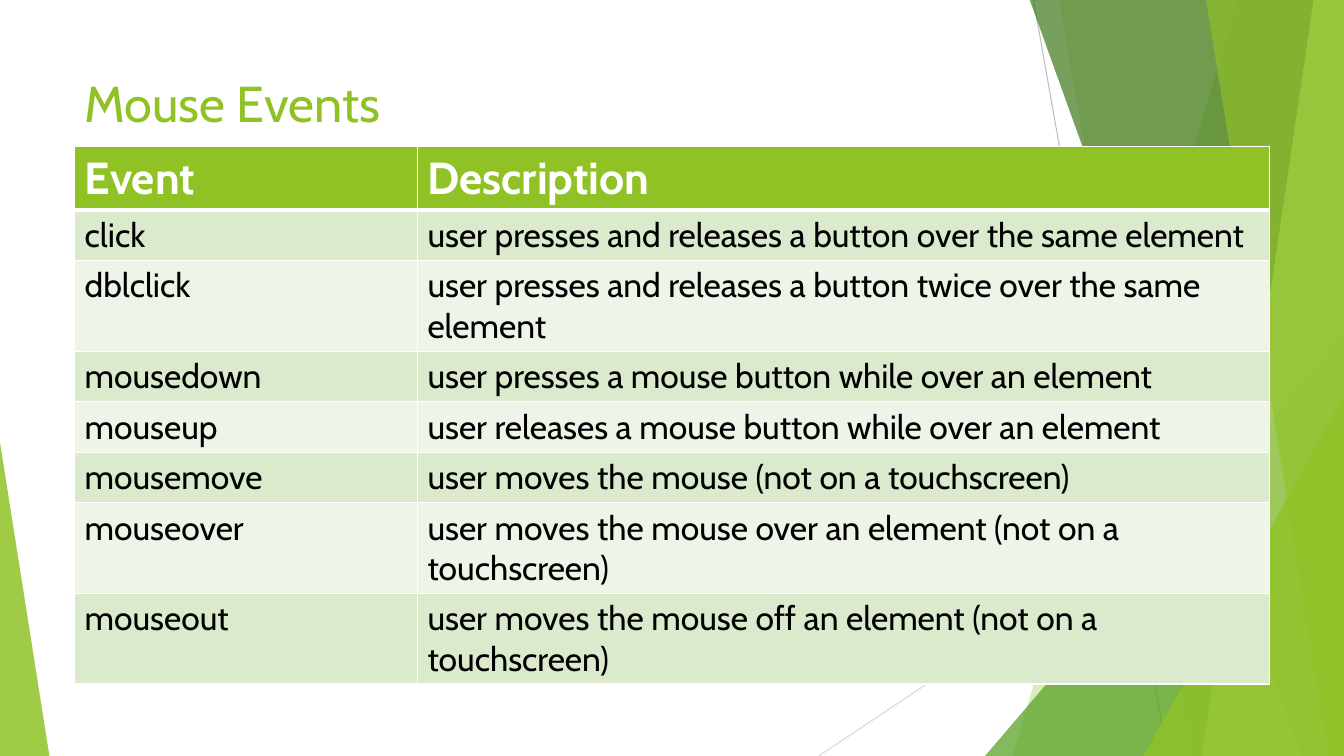
from dataclasses import dataclass

from lxml import etree
from pptx import Presentation
from pptx.dml.color import RGBColor
from pptx.enum.shapes import MSO_CONNECTOR, MSO_SHAPE
from pptx.enum.text import MSO_ANCHOR
from pptx.oxml.ns import qn
from pptx.util import Inches, Pt

STRAIGHT = MSO_CONNECTOR.STRAIGHT
TRIANGLE = MSO_SHAPE.ISOSCELES_TRIANGLE
TOP = MSO_ANCHOR.TOP
WIDTH, HEIGHT = 13.33, 7.5
FONT = "Cabin"
GREEN, WHITE, BLACK = "90C226", "FFFFFF", "000000"
TINTS = ("DBE9CD", "EEF4E8")


@dataclass
class Line:
    start: tuple[float, float]
    end: tuple[float, float]
    color: str


@dataclass
class Band:
    top: float
    foot: float
    color: str
    alpha: int


@dataclass
class Peak:
    left: float
    top: float
    width: float
    apex: float
    color: str
    alpha: int


@dataclass
class Event:
    name: str
    note: str
    height: float = 0.5


LINES = [
    Line((10.25, 0), (11.58, HEIGHT), "BFBFBF"),
    Line((WIDTH, 4.03), (8.12, HEIGHT), "D9D9D9"),
]
FACETS = [
    Band(12.28, 10.04, GREEN, 30),
    Band(10.5, 11.83, GREEN, 20),
    Peak(9.77, 3.33, 3.56, 1, "54A021", 72),
    Band(10.21, 12.91, "3F7819", 70),
    Band(13.03, 11.92, "C0E474", 70),
    Band(11.96, 13.18, GREEN, 65),
    Peak(11.34, 3.93, 1.99, 1, GREEN, 80),
    Peak(0, 4.39, 0.49, 0, GREEN, 85),
]
EVENTS = [
    Event("click", "user presses and releases a button over the same element"),
    Event("dblclick", "user presses and releases a button twice over the same element", 0.9),
    Event("mousedown", "user presses a mouse button while over an element"),
    Event("mouseup", "user releases a mouse button while over an element"),
    Event("mousemove", "user moves the mouse (not on a touchscreen)"),
    Event("mouseover", "user moves the mouse over an element (not on a touchscreen)", 0.9),
    Event("mouseout", "user moves the mouse off an element (not on a touchscreen)", 0.9),
]


def rgb(code: str) -> RGBColor:
    return RGBColor.from_string(code)


def write(frame, text: str, *, size: float, color: str, bold: bool = False) -> None:
    frame.word_wrap = True
    run = frame.paragraphs[0].add_run()
    run.text = text
    run.font.name = FONT
    run.font.size = Pt(size)
    run.font.bold = bold
    run.font.color.rgb = rgb(color)


def draw_line(slide, line: Line) -> None:
    ends = [Inches(n) for n in (*line.start, *line.end)]
    link = slide.shapes.add_connector(STRAIGHT, *ends)
    link.line.color.rgb = rgb(line.color)
    link.line.width = Pt(0.75)
    etree.SubElement(link._element.spPr, qn("a:effectLst"))


def paint(shape, color: str, alpha: int) -> None:
    shape.shadow.inherit = False
    shape.line.fill.background()
    shape.fill.solid()
    shape.fill.fore_color.rgb = rgb(color)
    tone = shape._element.spPr.find(qn("a:solidFill"))[0]
    etree.SubElement(tone, qn("a:alpha"), val=str(alpha * 1000))


def draw_band(slide, band: Band) -> None:
    rim = -0.01
    spots = [(band.top, rim), (WIDTH, rim), (WIDTH, HEIGHT), (band.foot, HEIGHT)]
    first, *rest = [(Inches(x), Inches(y)) for x, y in spots]
    pen = slide.shapes.build_freeform(*first)
    pen.add_line_segments(rest, close=True)
    paint(pen.convert_to_shape(), band.color, band.alpha)


def draw_peak(slide, peak: Peak) -> None:
    box = (peak.left, peak.top, peak.width, HEIGHT - peak.top)
    shape = slide.shapes.add_shape(TRIANGLE, *map(Inches, box))
    shape.adjustments[0] = peak.apex
    paint(shape, peak.color, peak.alpha)


def edge(cell, foot: float) -> None:
    props = cell._tc.get_or_add_tcPr()
    sides = {"lnL": 1, "lnR": 1, "lnT": 1, "lnB": foot}
    for spot, (side, width) in enumerate(sides.items()):
        rule = etree.Element(qn(f"a:{side}"), w=str(Pt(width)))
        fill = etree.SubElement(rule, qn("a:solidFill"))
        etree.SubElement(fill, qn("a:srgbClr"), val=WHITE)
        props.insert(spot, rule)


def draw_table(slide) -> None:
    rows = [Event("Event", "Description", 0.63), *EVENTS]
    widths = (3.4, 8.45)
    size = (sum(widths), sum(row.height for row in rows))
    box = map(Inches, (0.74, 1.45, *size))
    table = slide.shapes.add_table(len(rows), len(widths), *box).table
    table.horz_banding = False
    for column, width in zip(table.columns, widths):
        column.width = Inches(width)
    for index, row in enumerate(rows):
        head = index == 0
        table.rows[index].height = Inches(row.height)
        for cell, text in zip(table.rows[index].cells, (row.name, row.note)):
            cell.fill.solid()
            cell.fill.fore_color.rgb = rgb(GREEN if head else TINTS[(index - 1) % 2])
            edge(cell, 3 if head else 1)
            write(cell.text_frame, text, size=32 if head else 24,
                  color=WHITE if head else BLACK, bold=head)


def main() -> None:
    deck = Presentation()
    deck.slide_width, deck.slide_height = Inches(WIDTH), Inches(HEIGHT)
    slide = deck.slides.add_slide(deck.slide_layouts[6])
    for line in LINES:
        draw_line(slide, line)
    for facet in FACETS:
        if isinstance(facet, Band):
            draw_band(slide, facet)
        else:
            draw_peak(slide, facet)
    box = map(Inches, (0.74, 0.67, 9.4, 0.88))
    title = slide.shapes.add_textbox(*box).text_frame
    title.vertical_anchor = TOP
    write(title, "Mouse Events", size=36, color=GREEN)
    draw_table(slide)
    deck.save("out.pptx")


if __name__ == "__main__":
    main()
